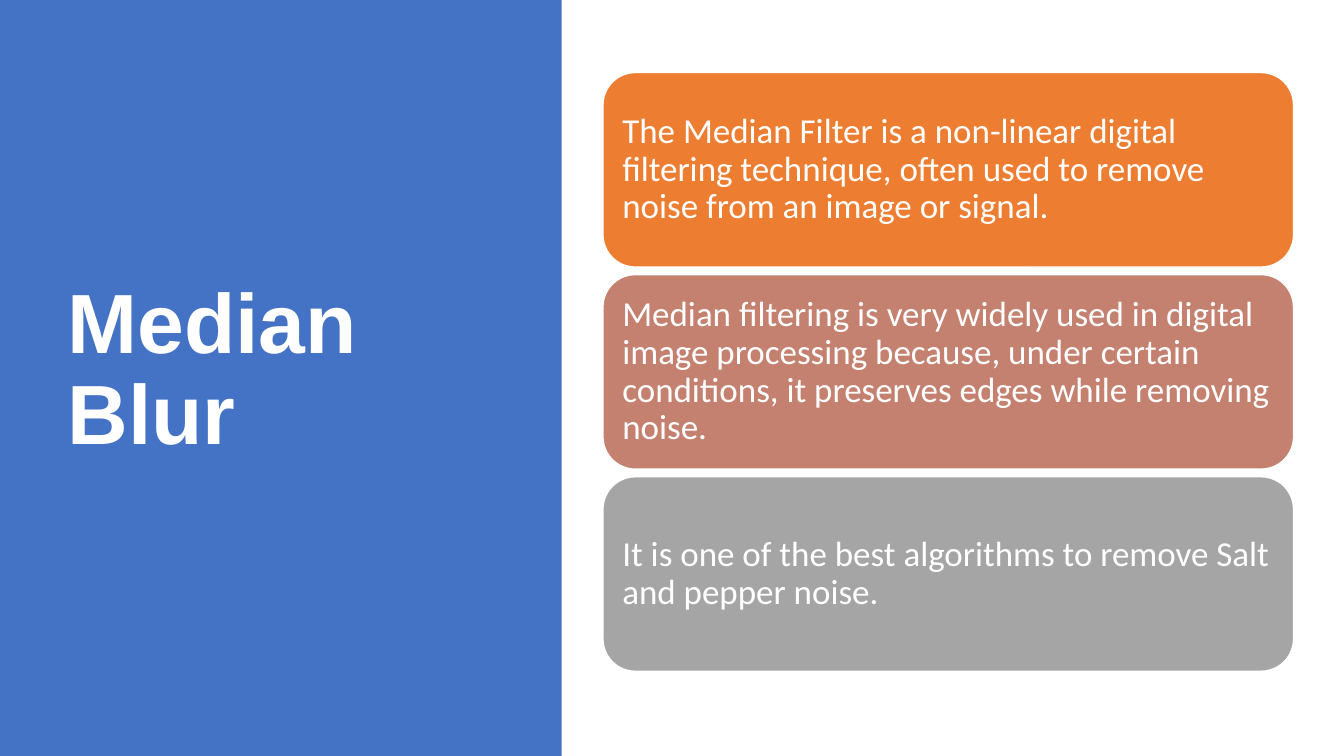
import pptx
import pptx.util
import pptx.dml.color
import pptx.enum.shapes
import pptx.enum.text

Inches = pptx.util.Inches
RGBColor = pptx.dml.color.RGBColor
SHAPE = pptx.enum.shapes.MSO_SHAPE

WHITE = RGBColor(0xFF, 0xFF, 0xFF)
BLUE = RGBColor(0x44, 0x72, 0xC4)
ORANGE = RGBColor(0xED, 0x7D, 0x31)
ROSE = RGBColor(0xC4, 0x81, 0x70)
GRAY = RGBColor(0xA5, 0xA5, 0xA5)

WIDE, HIGH = 13.33, 7.5
LEFT, TOP = 5.98, 0.72
CARD_W, CARD_H = 6.85, 1.93
STEP = 2.005


def write(shape, text, size, font, bold=False, inset=0.1):
    frame = shape.text_frame
    frame.word_wrap = True
    frame.vertical_anchor = pptx.enum.text.MSO_ANCHOR.MIDDLE
    frame.margin_left = frame.margin_right = Inches(inset)
    frame.margin_top = frame.margin_bottom = Inches(inset)
    para = frame.paragraphs[0]
    para.alignment = pptx.enum.text.PP_ALIGN.LEFT
    para.line_spacing = 0.9
    run = para.add_run()
    run.text = text
    run.font.size = pptx.util.Pt(size)
    run.font.name = font
    run.font.bold = bold
    run.font.color.rgb = WHITE


def block(kind, left, top, width, height, fill):
    shape = slide.shapes.add_shape(
        kind, Inches(left), Inches(top), Inches(width), Inches(height))
    shape.shadow.inherit = False
    shape.fill.solid()
    shape.fill.fore_color.rgb = fill
    return shape


deck = pptx.Presentation()
deck.slide_width, deck.slide_height = Inches(WIDE), Inches(HIGH)
slide = deck.slides.add_slide(deck.slide_layouts[6])

panel = block(SHAPE.RECTANGLE, 0, 0, 5.57, HIGH, BLUE)
panel.line.fill.background()

title = slide.shapes.add_textbox(
    Inches(0.57), Inches(0.68), Inches(4.16), Inches(6.02))
write(title, "Median Blur", 60, "Arial", bold=True)

cards = [
    (ORANGE, "The Median Filter is a non-linear digital filtering technique, "
             "often used to remove noise from an image or signal."),
    (ROSE, "Median filtering is very widely used in digital image processing "
           "because, under certain conditions, it preserves edges while "
           "removing noise."),
    (GRAY, "It is one of the best algorithms to remove Salt and pepper noise."),
]
for row, (fill, text) in enumerate(cards):
    card = block(SHAPE.ROUNDED_RECTANGLE, LEFT, TOP + row * STEP,
                 CARD_W, CARD_H, fill)
    card.line.color.rgb = WHITE
    card.line.width = pptx.util.Pt(1)
    write(card, text, 25, "Calibri")

deck.save("out.pptx")
